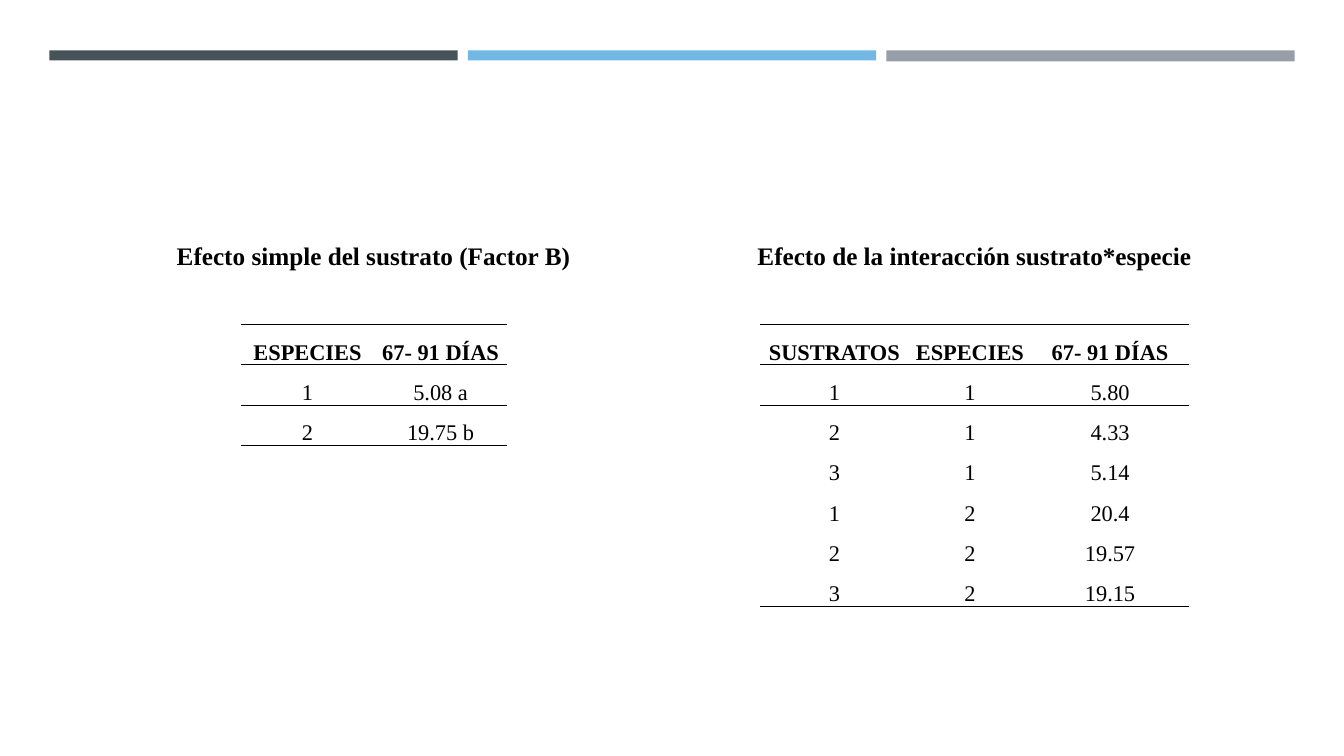
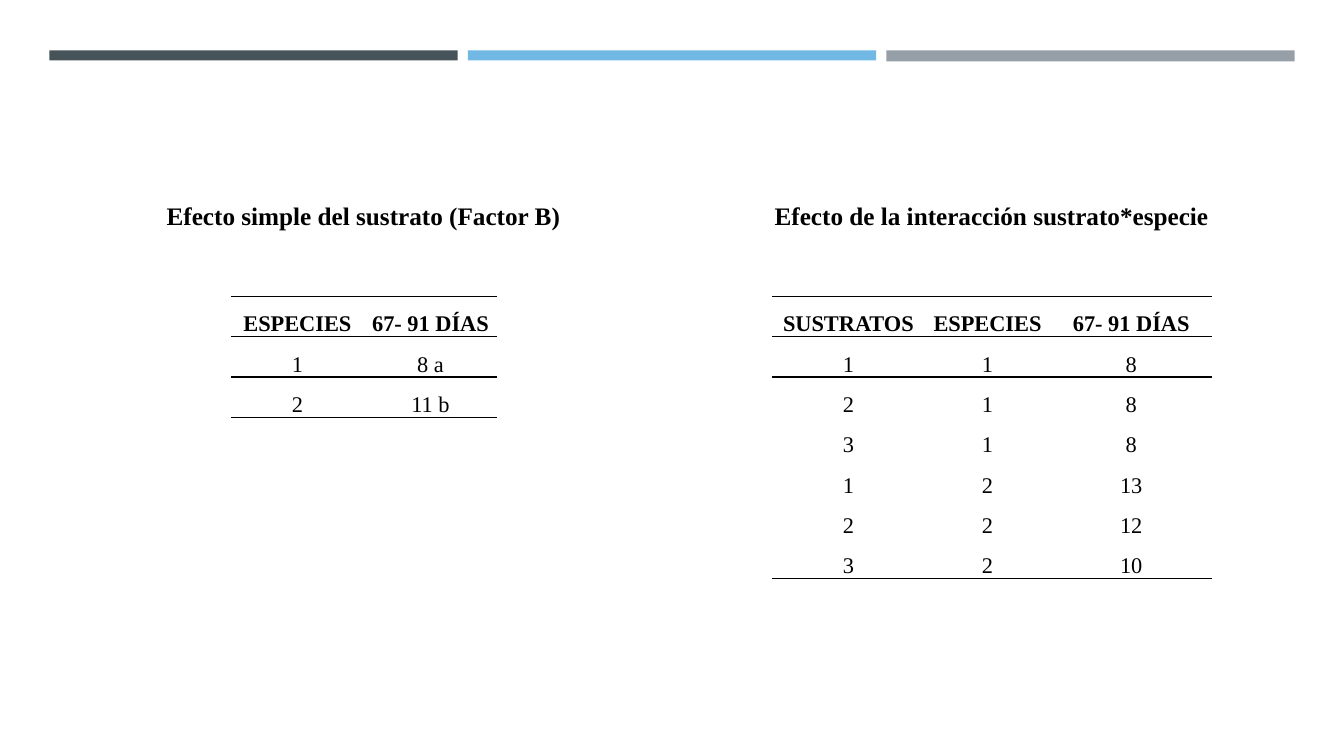
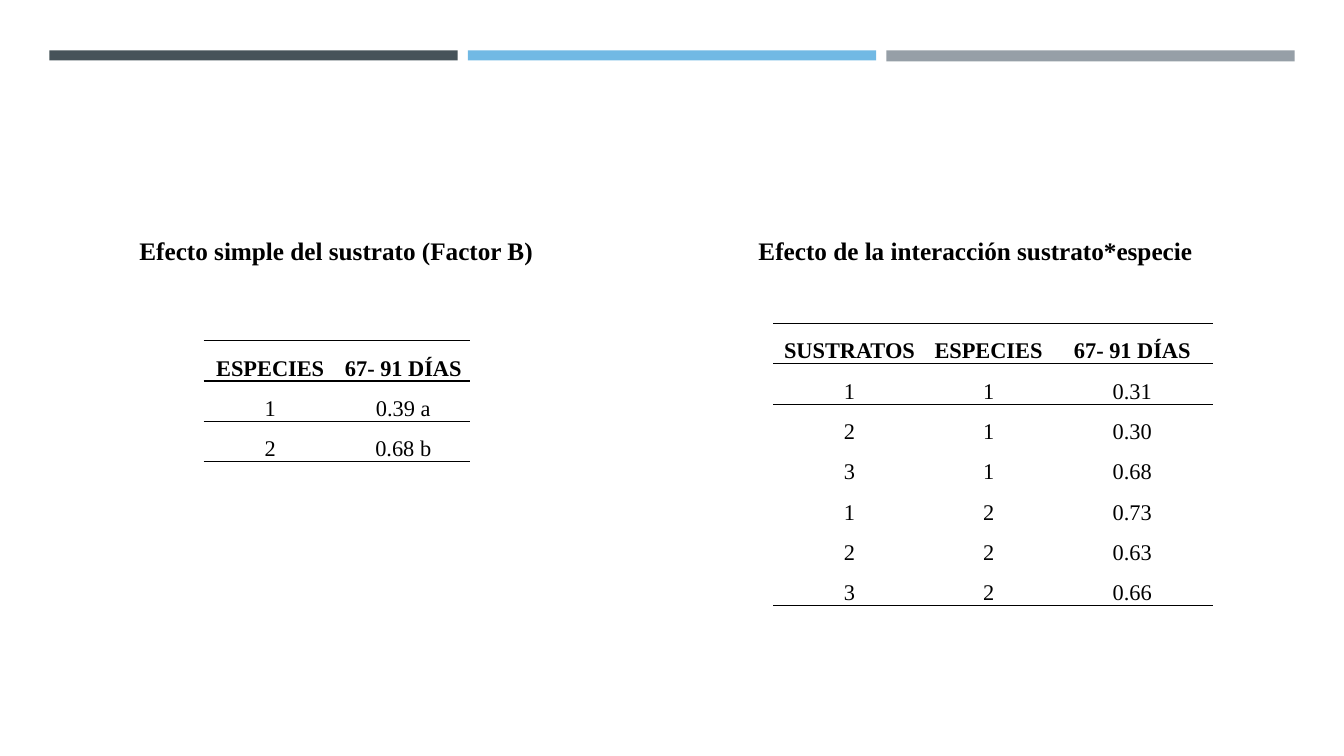
from lxml.etree import SubElement
from pptx import Presentation
from pptx.dml.color import RGBColor
from pptx.enum.shapes import MSO_SHAPE
from pptx.enum.text import MSO_ANCHOR, PP_ALIGN
from pptx.oxml.ns import qn
from pptx.util import Pt

PX = 9144  # EMU in one px, 100 px to the inch
FONT = "Times New Roman"
BLACK = "000000"
BAND_COLOURS = ["465359", "71B9E4", "969FA7"]
BAND_HEIGHTS = [10, 10, 11]
NO_STYLE = "{2D5ABB26-0587-4C30-8999-92F81FD0307C}"

SIMPLE_TITLE = "Efecto simple del sustrato (Factor B)"
SIMPLE_HEADER = ["ESPECIES", "67- 91 DÍAS"]
CROSS_TITLE = "Efecto de la interacción sustrato*especie"
CROSS_HEADER = ["SUSTRATOS", "ESPECIES", "67- 91 DÍAS"]
SIMPLE_WIDTHS = [132, 132]
NARROW_WIDTHS = [147, 122, 156]
WIDE_WIDTHS = [151, 125, 160]

# Each slide: heading top, then for both panels the heading left,
# the table's left and top, and the measured values
SLIDES = [
    dict(top=230, simple=(153, 239, 322), cross=(731, 754, 322),
         widths=NARROW_WIDTHS, means=["5.08 a", "19.75 b"],
         values=["5.80", "4.33", "5.14", "20.4", "19.57", "19.15"]),
    dict(top=190, simple=(143, 229, 294), cross=(748, 766, 294),
         widths=WIDE_WIDTHS, means=["8 a", "11 b"],
         values=["8", "8", "8", "13", "12", "10"]),
    dict(top=225, simple=(116, 202, 338), cross=(732, 767, 321),
         widths=WIDE_WIDTHS, means=["0.39 a", "0.68 b"],
         values=["0.31", "0.30", "0.68", "0.73", "0.63", "0.66"]),
]


def px(*lengths):
    return [length * PX for length in lengths]


def colour(value):
    return RGBColor.from_string(value)


def style_para(para, size, bold, spacing, after):
    para.alignment = PP_ALIGN.CENTER
    para.line_spacing = spacing
    para.space_after = Pt(after)
    for span in para.runs:
        span.font.name = FONT
        span.font.size = Pt(size)
        span.font.bold = bold
        span.font.color.rgb = colour(BLACK)


def add_bands(page, left, top, width, gap):
    for index, (fill, height) in enumerate(zip(BAND_COLOURS, BAND_HEIGHTS)):
        band = page.shapes.add_shape(
            MSO_SHAPE.RECTANGLE,
            *px(left + index * (width + gap), top, width, height))
        band.shadow.inherit = False
        band.fill.solid()
        band.fill.fore_color.rgb = colour(fill)
        band.line.fill.background()


def add_heading(page, left, top, width, text):
    box = page.shapes.add_textbox(*px(left, top, width, 44))
    frame = box.text_frame
    frame.word_wrap = True
    frame.vertical_anchor = MSO_ANCHOR.MIDDLE
    para = frame.paragraphs[0]
    para.text = text
    para.space_before = Pt(3.6)
    style_para(para, 18, True, 1.1, 6)


def set_borders(cell, above, below):
    properties = cell._tc.get_or_add_tcPr()
    sides = [("a:lnL", False), ("a:lnR", False), ("a:lnT", above), ("a:lnB", below)]
    for tag, ruled in sides:
        line = SubElement(properties, qn(tag), w=str(Pt(1)))
        if ruled:
            fill = SubElement(line, qn("a:solidFill"))
            SubElement(fill, qn("a:srgbClr"), val=BLACK)
        else:
            SubElement(line, qn("a:noFill"))


def add_ruled_table(page, left, top, widths, rows, row_height=35):
    frame = page.shapes.add_table(
        len(rows), len(widths),
        *px(left, top, sum(widths), row_height * len(rows)))
    table = frame.table
    table.first_row = table.horz_banding = False
    table._tbl.tblPr.find(qn("a:tableStyleId")).text = NO_STYLE
    for column, width in zip(table.columns, widths):
        column.width = width * PX
    # Rules run at the top, under the first two rows and at the bottom
    rules = {0, 1, 2, len(rows)}
    for row_index, row in enumerate(rows):
        table.rows[row_index].height = row_height * PX
        for column_index, text in enumerate(row):
            cell = table.cell(row_index, column_index)
            cell.vertical_anchor = MSO_ANCHOR.BOTTOM
            cell.margin_left = cell.margin_right = 5 * PX
            cell.margin_top = cell.margin_bottom = 0
            set_borders(cell, row_index in rules, row_index + 1 in rules)
            cell.fill.background()
            para = cell.text_frame.paragraphs[0]
            para.text = text
            style_para(para, 16, row_index == 0, 1.5, 12)


def add_panel(page, place, heading_top, heading_width, title, widths, rows):
    heading_left, table_left, table_top = place
    add_heading(page, heading_left, heading_top, heading_width, title)
    add_ruled_table(page, table_left, table_top, widths, rows)


def add_results_slide(deck, top, simple, cross, widths, means, values):
    page = deck.slides.add_slide(deck.slide_layouts[6])
    add_bands(page, 49, 50, 405, 10)
    # Effect of one factor
    simple_rows = [[str(species), mean] for species, mean in enumerate(means, 1)]
    add_panel(page, simple, top, 435, SIMPLE_TITLE, SIMPLE_WIDTHS,
              [SIMPLE_HEADER] + simple_rows)
    # Interaction: three substrates within each species
    cross_rows = [[str(index % 3 + 1), str(index // 3 + 1), value]
                  for index, value in enumerate(values)]
    add_panel(page, cross, top, 471, CROSS_TITLE, widths,
              [CROSS_HEADER] + cross_rows)


def main():
    deck = Presentation()
    deck.slide_width, deck.slide_height = px(1333, 750)
    for content in SLIDES:
        add_results_slide(deck, **content)
    deck.save("out.pptx")


if __name__ == "__main__":
    main()
